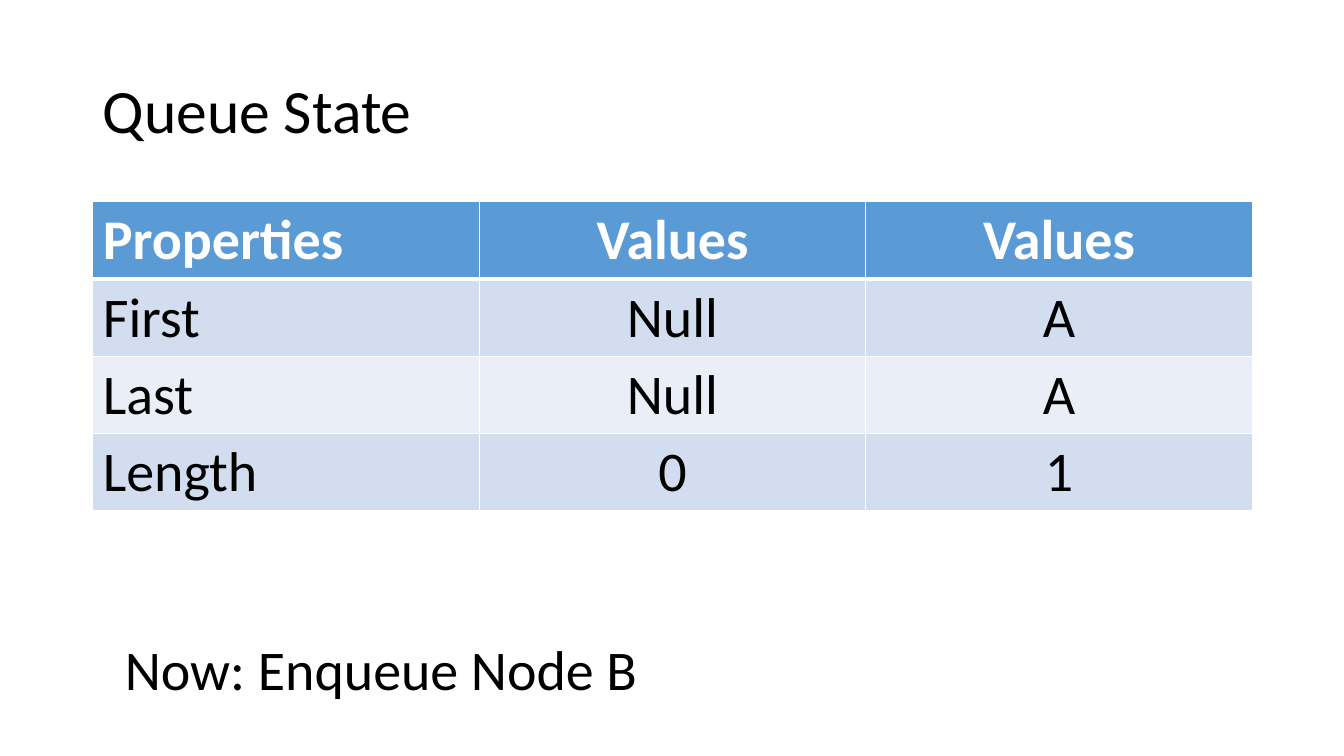
from lxml import etree
from pptx import Presentation
from pptx.dml.color import RGBColor
from pptx.enum import text
from pptx.oxml import ns
from pptx.util import Inches, Pt

BLACK, WHITE = "000000", "FFFFFF"
HEADER_FILL = "5B9BD5"
BAND_FILLS = ["D2DEEF", "EAEFF7"]
QUEUE_STATE = [
    ["Properties", "Values", "Values"],
    ["First", "Null", "A"],
    ["Last", "Null", "A"],
    ["Length", "0", "1"],
]


def rgb(hex_color):
    return RGBColor.from_string(hex_color)


def write(frame, wording, size=40, color=BLACK, bold=False,
          align=text.PP_ALIGN.LEFT, spacing=None):
    paragraph = frame.paragraphs[0]
    paragraph.alignment = align
    if spacing:
        paragraph.line_spacing = spacing
    run = paragraph.add_run()
    run.text = wording
    run.font.name = "Calibri"
    run.font.size = Pt(size)
    run.font.bold = bold
    run.font.color.rgb = rgb(color)


def add_borders(cell, widths, color=WHITE):
    """Draw cell borders; widths maps each side (L, R, T, B) to points."""
    properties = cell._tc.get_or_add_tcPr()
    for side, width in widths.items():
        line = etree.SubElement(properties, ns.qn(f"a:ln{side}"), w=str(Pt(width)))
        fill = etree.SubElement(line, ns.qn("a:solidFill"))
        etree.SubElement(fill, ns.qn("a:srgbClr"), val=color)


def add_title(slide, left, top, width, height):
    title = slide.shapes.add_textbox(left, top, width, height).text_frame
    title.word_wrap = True
    title.vertical_anchor = text.MSO_ANCHOR.MIDDLE
    write(title, "Queue State", size=44, spacing=0.9)


def add_state_table(slide, left, top, width, height):
    table = slide.shapes.add_table(
        len(QUEUE_STATE), len(QUEUE_STATE[0]), left, top, width, height).table
    for r, values in enumerate(QUEUE_STATE):
        header = r == 0
        for c, value in enumerate(values):
            cell = table.cell(r, c)
            add_borders(cell, {"L": 1, "R": 1, "T": 3 if r == 1 else 1,
                               "B": 3 if header else 1})
            cell.fill.solid()
            cell.fill.fore_color.rgb = rgb(
                HEADER_FILL if header else BAND_FILLS[(r - 1) % 2])
            write(cell.text_frame, value, bold=header,
                  color=WHITE if header else BLACK,
                  align=text.PP_ALIGN.CENTER if c else text.PP_ALIGN.LEFT)


def add_next_step(slide, left, top, width, height):
    step = slide.shapes.add_textbox(left, top, width, height).text_frame
    step.word_wrap = False
    step.auto_size = text.MSO_AUTO_SIZE.SHAPE_TO_FIT_TEXT
    write(step, "Now: Enqueue Node B")


def main():
    deck = Presentation()
    deck.slide_width, deck.slide_height = Inches(13.33), Inches(7.5)
    slide = deck.slides.add_slide(deck.slide_layouts[6])
    margin, content_width = Inches(0.92), Inches(11.5)
    add_title(slide, margin, Inches(0.4), content_width, Inches(1.45))
    add_state_table(slide, margin, Inches(2), content_width, Inches(3.07))
    add_next_step(slide, Inches(1.14), Inches(6.25), Inches(5.34), Inches(0.77))
    deck.save("out.pptx")


if __name__ == "__main__":
    main()
